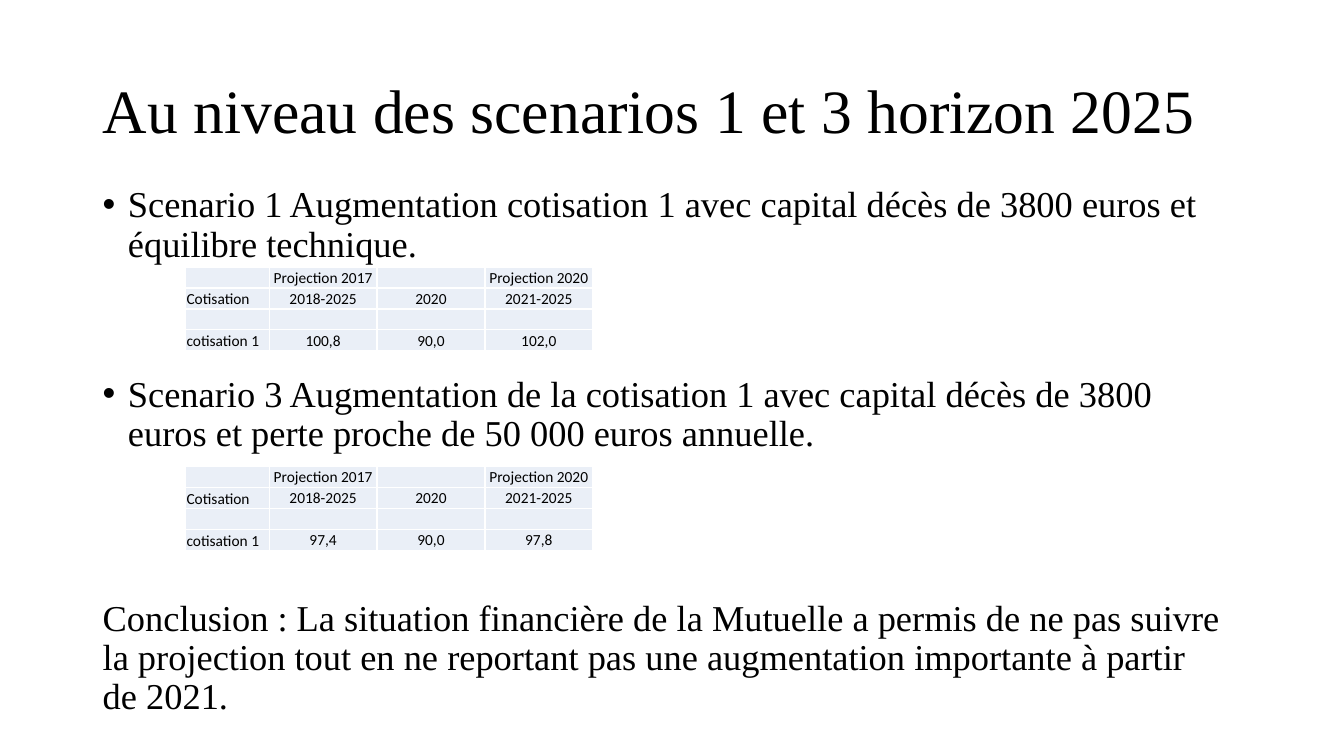
"""Build the slide on scenarios 1 and 3 for the 2025 horizon."""
from lxml import etree
from pptx import Presentation
from pptx.dml.color import RGBColor
from pptx.enum import text
from pptx.oxml import ns
from pptx.util import Inches, Pt

BLACK = RGBColor(0x00, 0x00, 0x00)
PALE_BLUE = RGBColor(0xEA, 0xEF, 0xF7)
SERIF, SANS = "Times New Roman", "Calibri"

TITLE = "Au niveau des scenarios 1 et 3 horizon 2025"
PARAGRAPHS = [
    ("Scenario 1 Augmentation cotisation 1 avec capital décès de 3800 euros "
     "et équilibre technique.", True, 0),
    ("Scenario 3 Augmentation de la cotisation 1 avec capital décès de 3800 "
     "euros et perte proche de 50 000 euros annuelle.", True, 79),
    ("Conclusion : La situation financière de la Mutuelle a permis de ne pas "
     "suivre la projection tout en ne reportant pas une augmentation "
     "importante à partir de 2021.", False, 104),
]
HEADINGS = [
    ("", "Projection 2017", "", "Projection 2020"),
    ("Cotisation", "2018-2025", "2020", "2021-2025"),
    ("", "", "", ""),
]
TABLES = [
    (2.65, ("cotisation 1", "100,8", "90,0", "102,0")),
    (4.63, ("cotisation 1", "97,4", "90,0", "97,8")),
]
TABLE_LEFT, TABLE_HEIGHT = 1.84, 0.83
COLUMNS = [0.83, 1.07, 1.07, 1.07]
LINE_SPACING = 0.9
CELL_FORMAT = {"margin_left": Inches(0.01), "margin_right": Inches(0.01),
               "margin_top": Inches(0.01), "margin_bottom": 0}


def write(p, words, font, size):
    """Add a run in the given font and size."""
    r = p.add_run()
    r.text = words
    r.font.name, r.font.size = font, Pt(size)
    r.font.color.rgb = BLACK


def add_bullet(p):
    """Give a paragraph a hanging bullet."""
    pPr = p._p.get_or_add_pPr()
    pPr.set("marL", str(Inches(0.25)))
    pPr.set("indent", str(-Inches(0.25)))
    etree.SubElement(pPr, ns.qn("a:buFont")).set("typeface", "Arial")
    etree.SubElement(pPr, ns.qn("a:buChar")).set("char", "•")


def add_title(s):
    """Fill and place the title."""
    sp = s.shapes.title
    sp.left, sp.top, sp.width, sp.height = map(Inches, (0.92, 0.4, 11.5, 1.45))
    tf = sp.text_frame
    tf.vertical_anchor = text.MSO_ANCHOR.MIDDLE
    p = tf.paragraphs[0]
    p.alignment, p.line_spacing = text.PP_ALIGN.LEFT, LINE_SPACING
    write(p, TITLE, SERIF, 44)


def add_body(s):
    """Add the scenarios and the conclusion."""
    tf = s.shapes.add_textbox(*map(Inches, (0.92, 1.8, 11.38, 5.45))).text_frame
    tf.word_wrap = True
    for i, (words, bulleted, gap) in enumerate(PARAGRAPHS):
        p = tf.add_paragraph() if i else tf.paragraphs[0]
        p.line_spacing, p.space_before = LINE_SPACING, Pt(gap)
        if bulleted:
            add_bullet(p)
        write(p, words, SERIF, 26)


def add_projection(s, top, values):
    """Add one table of projected contributions."""
    rows = HEADINGS + [values]
    table = s.shapes.add_table(
        len(rows), len(COLUMNS), Inches(TABLE_LEFT), Inches(top),
        Inches(sum(COLUMNS)), Inches(TABLE_HEIGHT)).table
    table.first_row = table.horz_banding = False
    for column, width in zip(table.columns, COLUMNS):
        column.width = Inches(width)
    for i, row in enumerate(rows):
        for j, words in enumerate(row):
            cell = table.cell(i, j)
            for name, value in CELL_FORMAT.items():
                setattr(cell, name, value)
            cell.fill.solid()
            cell.fill.fore_color.rgb = PALE_BLUE
            cell.vertical_anchor = text.MSO_ANCHOR.MIDDLE if j else text.MSO_ANCHOR.BOTTOM
            p = cell.text_frame.paragraphs[0]
            p.alignment = text.PP_ALIGN.CENTER if j else text.PP_ALIGN.LEFT
            if words:
                write(p, words, SANS, 11)
            else:
                etree.SubElement(p._p, ns.qn("a:endParaRPr")).set("sz", "1100")


def main():
    """Assemble and save the slide."""
    prs = Presentation()
    prs.slide_width, prs.slide_height = Inches(13.33), Inches(7.5)
    s = prs.slides.add_slide(prs.slide_layouts[5])
    add_title(s)
    add_body(s)
    for top, values in TABLES:
        add_projection(s, top, values)
    prs.save("out.pptx")


if __name__ == "__main__":
    main()
